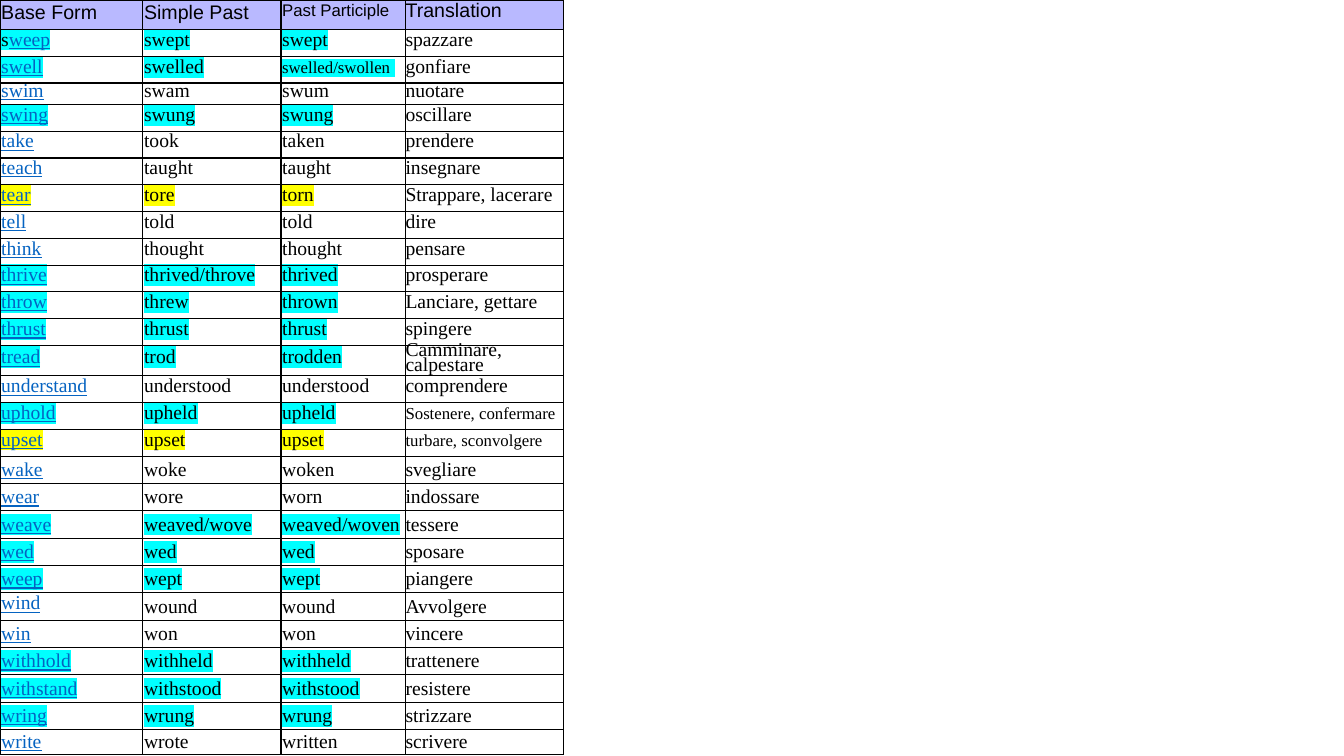
from lxml.etree import SubElement
from pptx import Presentation
from pptx.dml.color import RGBColor
from pptx.enum.text import MSO_ANCHOR
from pptx.oxml.ns import qn
from pptx.util import Cm, Pt

BLACK = RGBColor(0x00, 0x00, 0x00)
LINK_BLUE = RGBColor(0x05, 0x63, 0xC1)
LILAC = RGBColor(0xB9, 0xB9, 0xFF)
CYAN = RGBColor(0x00, 0xFF, 0xFF)
YELLOW = RGBColor(0xFF, 0xFF, 0x00)

HEADINGS = ["Base Form", "Simple Past", "Past Participle", "Translation"]
COLUMN_WIDTHS = [3.6, 3.48, 3.14, 3.98]
HEADER_HEIGHT = 0.74
TIGHT = 10.8
LOOSE = 11.3
ROW_HEIGHTS = {TIGHT: 0.675, LOOSE: 0.675, None: 0.69}
SPECIAL_HEIGHTS = {"swim": 0.54, "write": 0.63}
SMALL_TEXTS = {"Past Participle", "swelled/swollen ", "Sostenere, confermare", "turbare, sconvolgere"}
VERBS = [
    ("sweep|swept|swept|spazzare", CYAN, TIGHT),
    ("swell|swelled|swelled/swollen |gonfiare", CYAN, LOOSE),
    ("swim|swam|swum|nuotare", None, TIGHT),
    ("swing|swung|swung|oscillare", CYAN, LOOSE),
    ("take|took|taken|prendere", None, TIGHT),
    ("teach|taught|taught|insegnare", None, TIGHT),
    ("tear|tore|torn|Strappare, lacerare", YELLOW, LOOSE),
    ("tell|told|told|dire", None, TIGHT),
    ("think|thought|thought|pensare", None, LOOSE),
    ("thrive|thrived/throve|thrived|prosperare", CYAN, TIGHT),
    ("throw|threw|thrown|Lanciare, gettare", CYAN, TIGHT),
    ("thrust|thrust|thrust|spingere", CYAN, LOOSE),
    ("tread|trod|trodden|Camminare, calpestare", CYAN, TIGHT),
    ("understand|understood|understood|comprendere", None, LOOSE),
    ("uphold|upheld|upheld|Sostenere, confermare", CYAN, TIGHT),
    ("upset|upset|upset|turbare, sconvolgere", YELLOW, TIGHT),
    ("wake|woke|woken|svegliare", None, None),
    ("wear|wore|worn|indossare", None, None),
    ("weave|weaved/wove|weaved/woven|tessere", CYAN, None),
    ("wed|wed|wed|sposare", CYAN, None),
    ("weep|wept|wept|piangere", CYAN, None),
    ("wind|wound|wound|Avvolgere", None, None),
    ("win|won|won|vincere", None, None),
    ("withhold|withheld|withheld|trattenere", CYAN, None),
    ("withstand|withstood|withstood|resistere", CYAN, None),
    ("wring|wrung|wrung|strizzare", CYAN, None),
    ("write|wrote|written|scrivere", None, None),
]


def add_borders(cell):
    properties = cell._tc.get_or_add_tcPr()
    for side in ("a:lnL", "a:lnR", "a:lnT", "a:lnB"):
        line = SubElement(properties, qn(side), w=str(Pt(1)))
        fill = SubElement(line, qn("a:solidFill"))
        SubElement(fill, qn("a:srgbClr"), val=str(BLACK))


def format_cell(cell, column, anchor, fill=None):
    margin = Cm(0) if column == 3 else Cm(0.03)
    cell.margin_left = cell.margin_right = margin
    cell.margin_top = cell.margin_bottom = margin
    cell.vertical_anchor = anchor
    add_borders(cell)
    if fill is None:
        cell.fill.background()
    else:
        cell.fill.solid()
        cell.fill.fore_color.rgb = fill


def add_span(para, text, font_name, color=BLACK, highlight=None):
    span = para.add_run()
    span.text = text
    span.font.size = Pt(12 if text in SMALL_TEXTS else 14)
    span.font.name = font_name
    span.font.color.rgb = color
    span.font.underline = color == LINK_BLUE
    if highlight is not None:
        properties = span.font._element
        mark = SubElement(properties, qn("a:highlight"))
        SubElement(mark, qn("a:srgbClr"), val=str(highlight))
        properties.find(qn("a:solidFill")).addnext(mark)


def fill_header(table):
    table.rows[0].height = Cm(HEADER_HEIGHT)
    for column, heading in enumerate(HEADINGS):
        cell = table.cell(0, column)
        format_cell(cell, column, MSO_ANCHOR.TOP, LILAC)
        add_span(cell.text_frame.paragraphs[0], heading, "Arial")


def fill_verb(table, row, words, highlight, spacing):
    base = words[0]
    table.rows[row].height = Cm(SPECIAL_HEIGHTS.get(base, ROW_HEIGHTS[spacing]))
    for column, word in enumerate(words):
        cell = table.cell(row, column)
        format_cell(cell, column, MSO_ANCHOR.MIDDLE)
        para = cell.text_frame.paragraphs[0]
        line_spacing = TIGHT if word == "wind" else spacing
        if line_spacing:
            para.line_spacing = Pt(line_spacing)
        if word == "sweep":
            add_span(para, word[0], "Times New Roman", BLACK, highlight)
            word = word[1:]
        add_span(para, word, "Times New Roman",
                 LINK_BLUE if column == 0 else BLACK,
                 None if column == 3 else highlight)


def add_verb_table(page, left, top, width, height):
    frame = page.shapes.add_table(len(VERBS) + 1, len(HEADINGS), left, top, width, height)
    table = frame.table
    table.first_row = False
    table.horz_banding = False
    for column, column_width in zip(table.columns, COLUMN_WIDTHS):
        column.width = Cm(column_width)
    fill_header(table)
    for row, (forms, highlight, spacing) in enumerate(VERBS, start=1):
        fill_verb(table, row, forms.split("|"), highlight, spacing)


def main():
    deck = Presentation()
    deck.slide_width = Cm(33.87)
    deck.slide_height = Cm(19.05)
    page = deck.slides.add_slide(deck.slide_layouts[6])
    add_verb_table(page, Cm(0), Cm(0), Cm(sum(COLUMN_WIDTHS)), deck.slide_height)
    deck.save("out.pptx")


if __name__ == "__main__":
    main()
